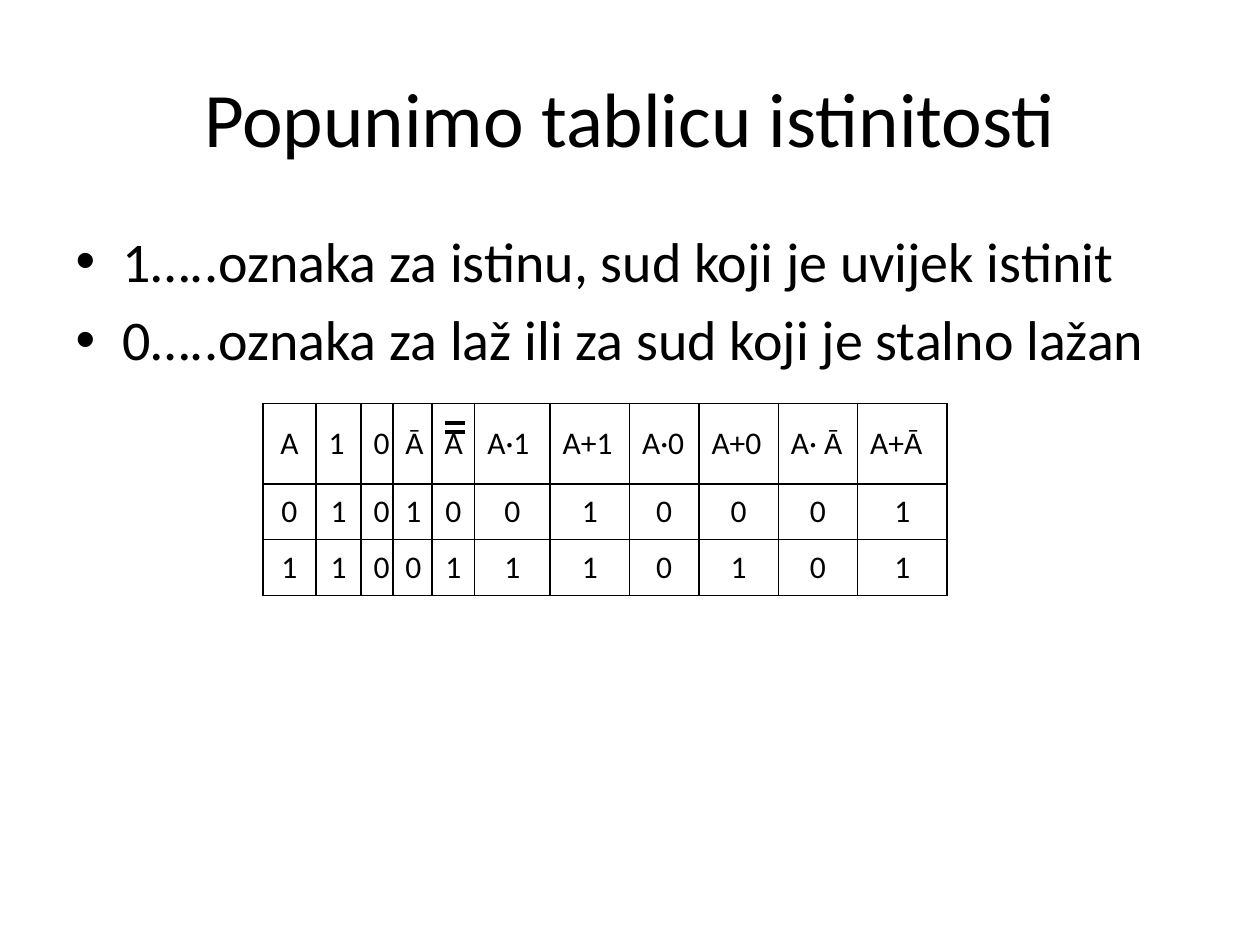
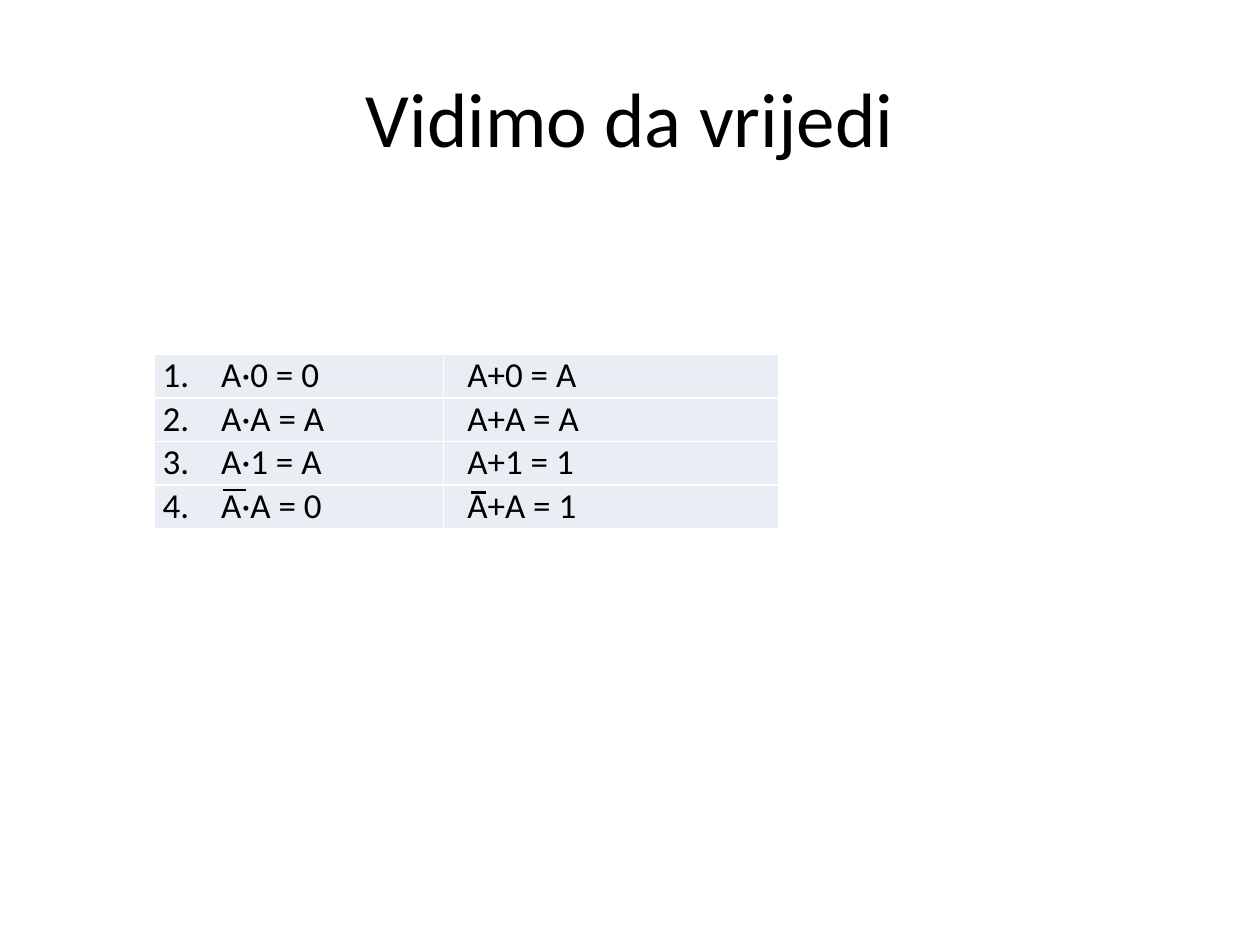
from lxml import etree
from pptx import Presentation
from pptx import util as u
from pptx.dml.color import RGBColor
from pptx.enum import shapes, text
from pptx.oxml import ns

COLORS = {"ink": "000000", "paper": "FFFFFF", "law": "E9EDF4"}
FONT = "Calibri"

TRUTH = {
    "title": "Popunimo tablicu istinitosti",
    "points": [
        "1…..oznaka za istinu, sud koji je uvijek istinit",
        "0…..oznaka za laž ili za sud koji je stalno lažan",
    ],
    "header": ["A", "1", "0", "Ā", "A", "A·1", "A+1", "A·0", "A+0", "A· Ā", "A+Ā"],
    "values": ["01010010001", "11001110101"],
    "at": (5.3, 8.13),
    "widths": [1.07, 0.91, 0.64, 0.79, 0.86, 1.52, 1.6, 1.4, 1.6, 1.6, 1.8],
    "heights": [1.63, 1.12, 1.12],
    "bars": [(8.97, 9.37, 8.71), (8.97, 9.37, 8.53)],
}
LAWS = {
    "title": "Vidimo da vrijedi",
    "pairs": [
        ("A·0 = 0", "A+0 = A"),
        ("A·A = A", "A+A = A"),
        ("A·1 = A", "A+1 = 1"),
        ("A·A = 0", "A+A = 1"),
    ],
    "at": (3.1, 7.14),
    "widths": [5.84, 6.76],
    "heights": [0.88] * 4,
    "bars": [(9.5, 9.8, 9.93), (4.5, 4.95, 9.88)],
}


def rgb(name):
    return RGBColor.from_string(COLORS[name])


def style(paragraph, size, align):
    paragraph.alignment = align
    for run in paragraph.runs:
        run.font.name = FONT
        run.font.size = u.Pt(size)
        run.font.color.rgb = rgb("ink")


def place(part, left, top, width, height):
    part.left, part.top = u.Cm(left), u.Cm(top)
    part.width, part.height = u.Cm(width), u.Cm(height)


def add_slide(deck, layout, title):
    slide = deck.slides.add_slide(deck.slide_layouts[layout])
    heading = slide.shapes.title
    place(heading, 1.27, 0.76, 22.86, 3.18)
    heading.text_frame.text = title
    heading.text_frame.vertical_anchor = text.MSO_ANCHOR.MIDDLE
    style(heading.text_frame.paragraphs[0], 44, text.PP_ALIGN.CENTER)
    return slide


def set_borders(cell, color):
    properties = cell._tc.get_or_add_tcPr()
    for side in ("a:lnL", "a:lnR", "a:lnT", "a:lnB"):
        line = etree.SubElement(properties, ns.qn(side), w=str(u.Pt(1)))
        fill = etree.SubElement(line, ns.qn("a:solidFill"))
        etree.SubElement(fill, ns.qn("a:srgbClr"), val=COLORS[color])


def add_grid(slide, content, rows, border):
    widths, heights = content["widths"], content["heights"]
    left, top = content["at"]
    grid = slide.shapes.add_table(
        len(heights), len(widths), u.Cm(left), u.Cm(top),
        u.Cm(sum(widths)), u.Cm(sum(heights))).table
    grid.first_row = grid.horz_banding = False
    for column, width in zip(grid.columns, widths):
        column.width = u.Cm(width)
    for row, height, words in zip(grid.rows, heights, rows):
        row.height = u.Cm(height)
        for cell, word in zip(row.cells, words):
            cell.text_frame.text = word
            set_borders(cell, border)
    return grid


def add_bars(slide, bars, weight):
    for start, end, y in bars:
        bar = slide.shapes.add_connector(
            shapes.MSO_CONNECTOR.STRAIGHT, u.Cm(start), u.Cm(y), u.Cm(end), u.Cm(y))
        bar.line.color.rgb = rgb("ink")
        bar.line.width = u.Pt(weight)
        etree.SubElement(bar._element.spPr, ns.qn("a:effectLst"))


def build_truth(deck):
    slide = add_slide(deck, 1, TRUTH["title"])
    points = slide.placeholders[1]
    place(points, 1.27, 4.44, 22.86, 12.57)
    points.text_frame.text = "\n".join(TRUTH["points"])
    for point in points.text_frame.paragraphs:
        style(point, 32, text.PP_ALIGN.LEFT)
    grid = add_grid(slide, TRUTH, [TRUTH["header"], *TRUTH["values"]], "ink")
    for r, row in enumerate(grid.rows):
        for c, cell in enumerate(row.cells):
            cell.fill.background()
            cell.vertical_anchor = text.MSO_ANCHOR.MIDDLE
            label = r == 0 and c > 0
            align = text.PP_ALIGN.LEFT if label else text.PP_ALIGN.CENTER
            style(cell.text_frame.paragraphs[0], 18, align)
    add_bars(slide, TRUTH["bars"], 2.25)


def build_laws(deck):
    slide = add_slide(deck, 5, LAWS["title"])
    rows = [(f"{number}.\t{product}", total)
            for number, (product, total) in enumerate(LAWS["pairs"], 1)]
    grid = add_grid(slide, LAWS, rows, "paper")
    indents = [(1.18, -1.18), (0.3, 0)]
    for row in grid.rows:
        for cell, (margin, indent) in zip(row.cells, indents):
            cell.fill.solid()
            cell.fill.fore_color.rgb = rgb("law")
            cell.margin_left = cell.margin_right = u.Cm(0.18)
            cell.margin_top = cell.margin_bottom = 0
            law = cell.text_frame.paragraphs[0]
            style(law, 20, text.PP_ALIGN.LEFT)
            law.space_before = u.Pt(6)
            properties = law._p.get_or_add_pPr()
            properties.set("marL", str(u.Cm(margin)))
            properties.set("indent", str(u.Cm(indent)))
    add_bars(slide, LAWS["bars"], 1.25)


def main():
    deck = Presentation()
    deck.slide_width, deck.slide_height = u.Cm(25.4), u.Cm(19.05)
    build_truth(deck)
    build_laws(deck)
    deck.save("out.pptx")


if __name__ == "__main__":
    main()
